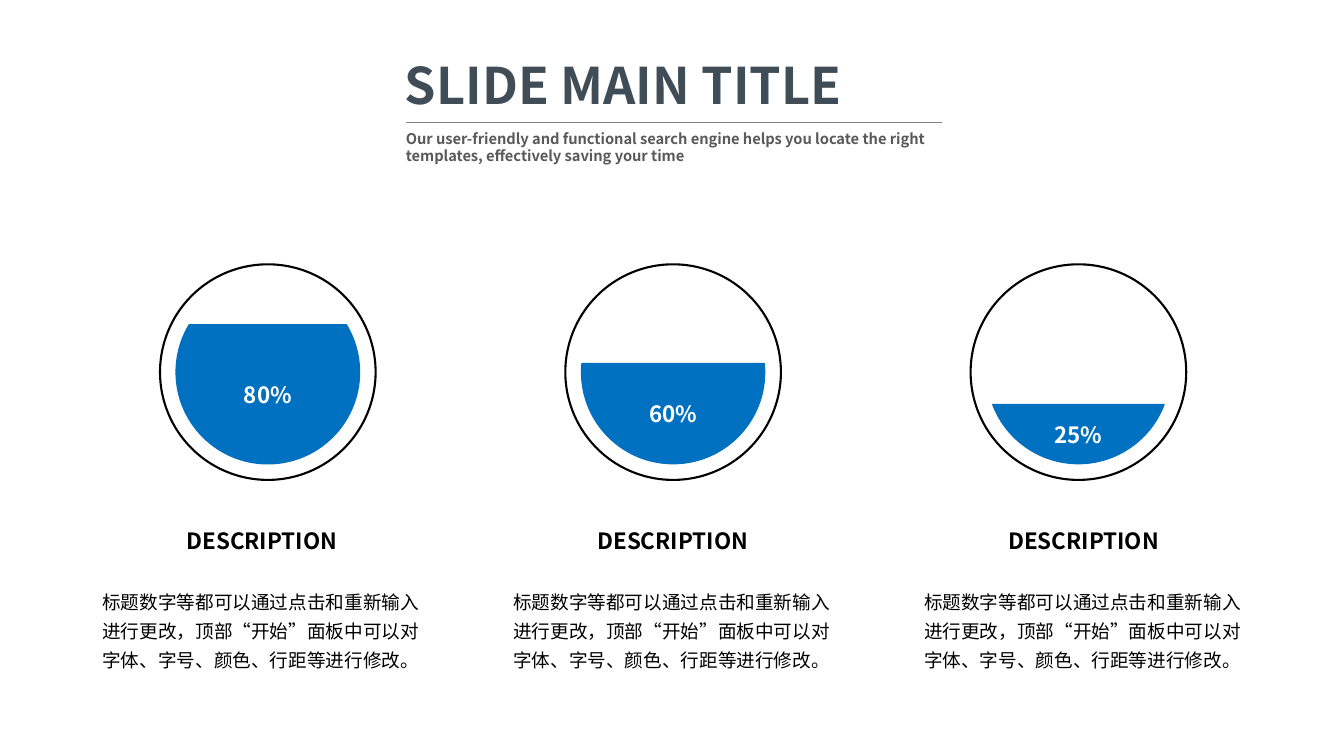
from math import asin, cos, pi, sin, tan

from lxml.etree import SubElement
from pptx import Presentation
from pptx.dml.color import RGBColor
from pptx.enum.shapes import MSO_CONNECTOR as CONNECTOR, MSO_SHAPE as SHAPE
from pptx.enum.text import MSO_ANCHOR as ANCHOR, PP_ALIGN as ALIGN
from pptx.oxml.ns import qn
from pptx.util import Pt

FONT = "Noto Sans CJK SC"
COLORS = {
    "title": "404C56",
    "subtitle": "595959",
    "text": "000000",
    "fill": "0070C0",
    "rule": "808080",
    "white": "FFFFFF",
}


def color(name):
    return RGBColor.from_string(COLORS[name])


def write(text, shape, size, ink="text", bold=True, align=ALIGN.CENTER,
          anchor=ANCHOR.TOP, spacing=None):
    frame = shape.text_frame
    frame.word_wrap = True
    frame.vertical_anchor = anchor
    paragraph = frame.paragraphs[0]
    paragraph.alignment = align
    paragraph.line_spacing = spacing
    run = paragraph.add_run()
    run.text = text
    run.font.name = FONT
    run.font.size = Pt(size)
    run.font.bold = bold
    run.font.color.rgb = color(ink)
    SubElement(run.font._element, qn("a:ea")).set("typeface", FONT)


presentation = Presentation()
presentation.slide_width = Pt(960)
presentation.slide_height = Pt(540)
slide = presentation.slides.add_slide(presentation.slide_layouts[6])
shapes = slide.shapes

RING_SIZE, RING_CENTER_Y, FIRST_CENTER_X, RING_PITCH = 154, 265.8, 191.3, 289.5
LIQUID_RADIUS = 65.5
gauges = [("80%", 232, 1), ("60%", 259.5, 0.75), ("25%", 288.8, 0.75)]

for index, (label, level, line_width) in enumerate(gauges):
    center_x = FIRST_CENTER_X + index * RING_PITCH
    ring = shapes.add_shape(
        SHAPE.OVAL, Pt(center_x - RING_SIZE / 2), Pt(RING_CENTER_Y - RING_SIZE / 2),
        Pt(RING_SIZE), Pt(RING_SIZE))
    ring.shadow.inherit = False
    ring.fill.background()
    ring.line.color.rgb = color("text")
    ring.line.width = Pt(1.5)

    start = asin((level - RING_CENTER_Y) / LIQUID_RADIUS)
    stops = [start, pi / 2, pi - start]
    if start < 0:
        stops = [start, 0, pi / 2, pi, pi - start]
    curve = [(cos(start), sin(start))]
    for begin, end in zip(stops, stops[1:]):
        pull = 4 / 3 * tan((end - begin) / 4)
        curve += [(cos(begin) - pull * sin(begin), sin(begin) + pull * cos(begin)),
                  (cos(end) + pull * sin(end), sin(end) - pull * cos(end)),
                  (cos(end), sin(end))]
    points = [(Pt(center_x + LIQUID_RADIUS * x), Pt(RING_CENTER_Y + LIQUID_RADIUS * y))
              for x, y in curve]
    builder = shapes.build_freeform(*points[0])
    builder.add_line_segments(points[1:], close=True)
    liquid = builder.convert_to_shape()
    segments = list(liquid._element.iter(qn("a:lnTo")))
    for first in range(0, 3 * (len(stops) - 1), 3):
        bezier = segments[first]
        bezier.tag = qn("a:cubicBezTo")
        for segment in segments[first + 1:first + 3]:
            bezier.append(segment[0])
            segment.getparent().remove(segment)
    liquid.shadow.inherit = False
    liquid.fill.solid()
    liquid.fill.fore_color.rgb = color("fill")
    liquid.line.color.rgb = color("fill")
    liquid.line.width = Pt(line_width)
    write(label, liquid, 16, ink="white", anchor=ANCHOR.MIDDLE)

TEXT_PITCH = 293.5
DETAIL = "标题数字等都可以通过点击和重新输入进行更改，顶部“开始”面板中可以对字体、字号、颜色、行距等进行修改。"
for index in range(len(gauges)):
    offset = index * TEXT_PITCH
    heading = shapes.add_textbox(Pt(97.5 + offset), Pt(373), Pt(179), Pt(26.5))
    write("DESCRIPTION", heading, 16)
    detail = shapes.add_textbox(Pt(66 + offset), Pt(413.8), Pt(242), Pt(70.5))
    write(DETAIL, detail, 13.3, bold=False, align=ALIGN.LEFT, spacing=1.3)

title = shapes.add_textbox(Pt(282.2), Pt(35.3), Pt(398), Pt(51))
write("SLIDE MAIN TITLE", title, 36, ink="title", align=ALIGN.LEFT)
subtitle = shapes.add_textbox(Pt(282.8), Pt(88.9), Pt(397), Pt(34))
write("Our user-friendly and functional search engine helps you locate the right "
      "templates, effectively saving your time",
      subtitle, 10.5, ink="subtitle", align=ALIGN.LEFT)

for ink, y in [("rule", 87.7), ("white", 88.6)]:
    rule = shapes.add_connector(CONNECTOR.STRAIGHT, Pt(290), Pt(y), Pt(672.7), Pt(y))
    rule.line.color.rgb = color(ink)
    rule.line.width = Pt(1)
    SubElement(rule._element.spPr, qn("a:effectLst"))

presentation.save("out.pptx")
